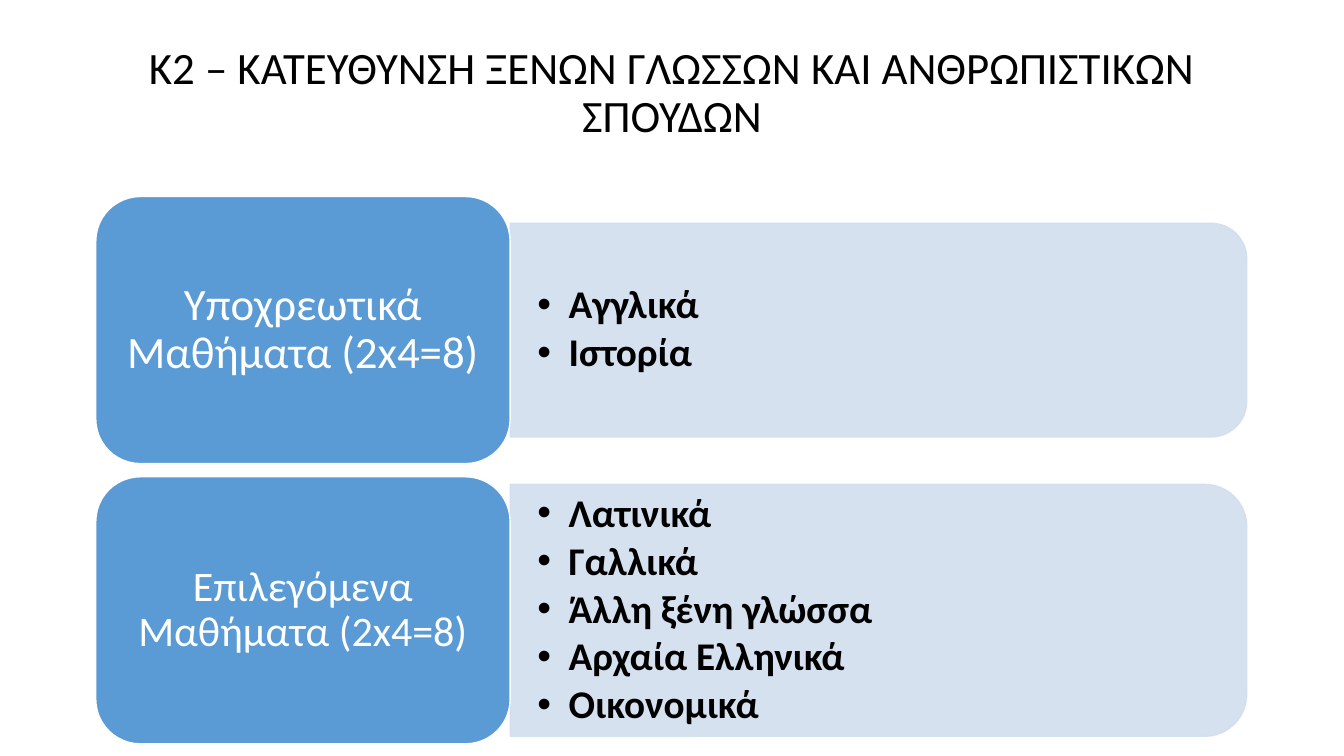
from lxml.etree import SubElement
from pptx import Presentation
from pptx.dml.color import RGBColor
from pptx.enum.shapes import MSO_SHAPE
from pptx.enum.text import MSO_ANCHOR, PP_ALIGN
from pptx.oxml.ns import qn
from pptx.util import Inches, Pt


def paint(color_format, value):
    """Set a hex colour on a colour format."""
    color_format.rgb = RGBColor.from_string(value)


class CourseSlide:
    """Hold the style and current page, placing elements in percent of its size."""

    font = "Calibri"
    ink, paper, accent, tint = "000000", "FFFFFF", "5B9BD5", "D2DEEF"
    panel_opacity = 90

    def __init__(self, deck):
        """Add a blank page to the deck."""
        self.deck = deck
        self.page = deck.slides.add_slide(deck.slide_layouts[6])

    def across(self, share):
        """Turn a percentage of the slide width into a length."""
        return round(self.deck.slide_width * share / 100)

    def down(self, share):
        """Turn a percentage of the slide height into a length."""
        return round(self.deck.slide_height * share / 100)

    def area(self, left, top, width, height):
        """Turn four percentages into a position and size."""
        return self.across(left), self.down(top), self.across(width), self.down(height)

    def block(self, kind, area, fill, line, opacity=100):
        """Draw a filled preset shape with a thin outline."""
        shape = self.page.shapes.add_shape(kind, *area)
        shape.shadow.inherit = False
        shape.fill.solid()
        paint(shape.fill.fore_color, fill)
        shape.line.width = Pt(1)
        paint(shape.line.color, line)
        if opacity < 100:
            for color in shape._element.spPr.iter(qn("a:srgbClr")):
                SubElement(color, qn("a:alpha"), val=str(opacity * 1000))
        return shape

    def add_text(self, box, lines, size, color, insets, after=0, bold=False, bullets=False):
        """Fill a box with centred lines or a bulleted list."""
        frame = box.text_frame
        frame.word_wrap = True
        frame.vertical_anchor = MSO_ANCHOR.MIDDLE
        frame.margin_left = frame.margin_right = Inches(insets[0])
        frame.margin_top = frame.margin_bottom = Inches(insets[1])
        for index, line in enumerate(lines):
            para = frame.add_paragraph() if index else frame.paragraphs[0]
            if bullets:
                properties = para._p.get_or_add_pPr()
                properties.set("marL", str(Inches(0.31)))
                properties.set("indent", str(-Inches(0.31)))
                SubElement(properties, qn("a:buFont"), typeface="Arial")
                SubElement(properties, qn("a:buChar"), char="•")
            para.alignment = PP_ALIGN.LEFT if bullets else PP_ALIGN.CENTER
            para.line_spacing = 0.9
            para.space_after = Pt(after)
            span = para.add_run()
            span.text = line
            span.font.name = self.font
            span.font.size = Pt(size)
            span.font.bold = bold
            paint(span.font.color, color)

    def title(self, text, area):
        """Add the slide title."""
        box = self.page.shapes.add_textbox(*area)
        self.add_text(box, [text], 32, self.ink, (0.1, 0.05))

    def label(self, text, area, size, insets):
        """Draw a rounded label with its caption."""
        shape = self.block(MSO_SHAPE.ROUNDED_RECTANGLE, area, self.accent, self.paper)
        self.add_text(shape, [text], size, self.paper, insets, after=11)

    def panel(self, courses, area):
        """Draw a panel rounded on its right side and list the courses on it."""
        left, top, width, height = area
        turned = (left + (width - height) // 2, top + (height - width) // 2, height, width)
        shape = self.block(MSO_SHAPE.ROUND_2_SAME_RECTANGLE, turned,
                           self.tint, self.tint, self.panel_opacity)
        shape.rotation = 90
        box = self.page.shapes.add_textbox(*area)
        self.add_text(box, courses, 28, self.ink, (0.27, 0.14), 4, True, True)


def main():
    """Build and save the slide."""
    deck = Presentation()
    deck.slide_width, deck.slide_height = Inches(13.33), Inches(7.5)
    slide = CourseSlide(deck)
    slide.title("Κ2 – ΚΑΤΕΥΘΥΝΣΗ ΞΕΝΩΝ ΓΛΩΣΣΩΝ ΚΑΙ ΑΝΘΡΩΠΙΣΤΙΚΩΝ ΣΠΟΥΔΩΝ",
                slide.area(9.38, 1.6, 81.25, 21.6))
    groups = [
        ("Υποχρεωτικά Μαθήματα (2x4=8)", 32, (0.13, 0.07), 28.27,
         ["Αγγλικά", "Ιστορία"]),
        ("Επιλεγόμενα Μαθήματα (2x4=8)", 30, (0.12, 0.06), 33.33,
         ["Λατινικά", "Γαλλικά", "Άλλη ξένη γλώσσα", "Αρχαία Ελληνικά", "Οικονομικά"]),
    ]
    left, label_width, panel_width = 7.13, 30.83, 54.8
    first_top, label_height, pitch = 26, 35.33, 37.07
    for row, (caption, size, insets, panel_height, courses) in enumerate(groups):
        top = first_top + row * pitch
        panel_top = top + (label_height - panel_height) / 2
        slide.panel(courses, slide.area(left + label_width, panel_top,
                                        panel_width, panel_height))
        slide.label(caption, slide.area(left, top, label_width, label_height), size, insets)
    deck.save("out.pptx")


if __name__ == "__main__":
    main()
